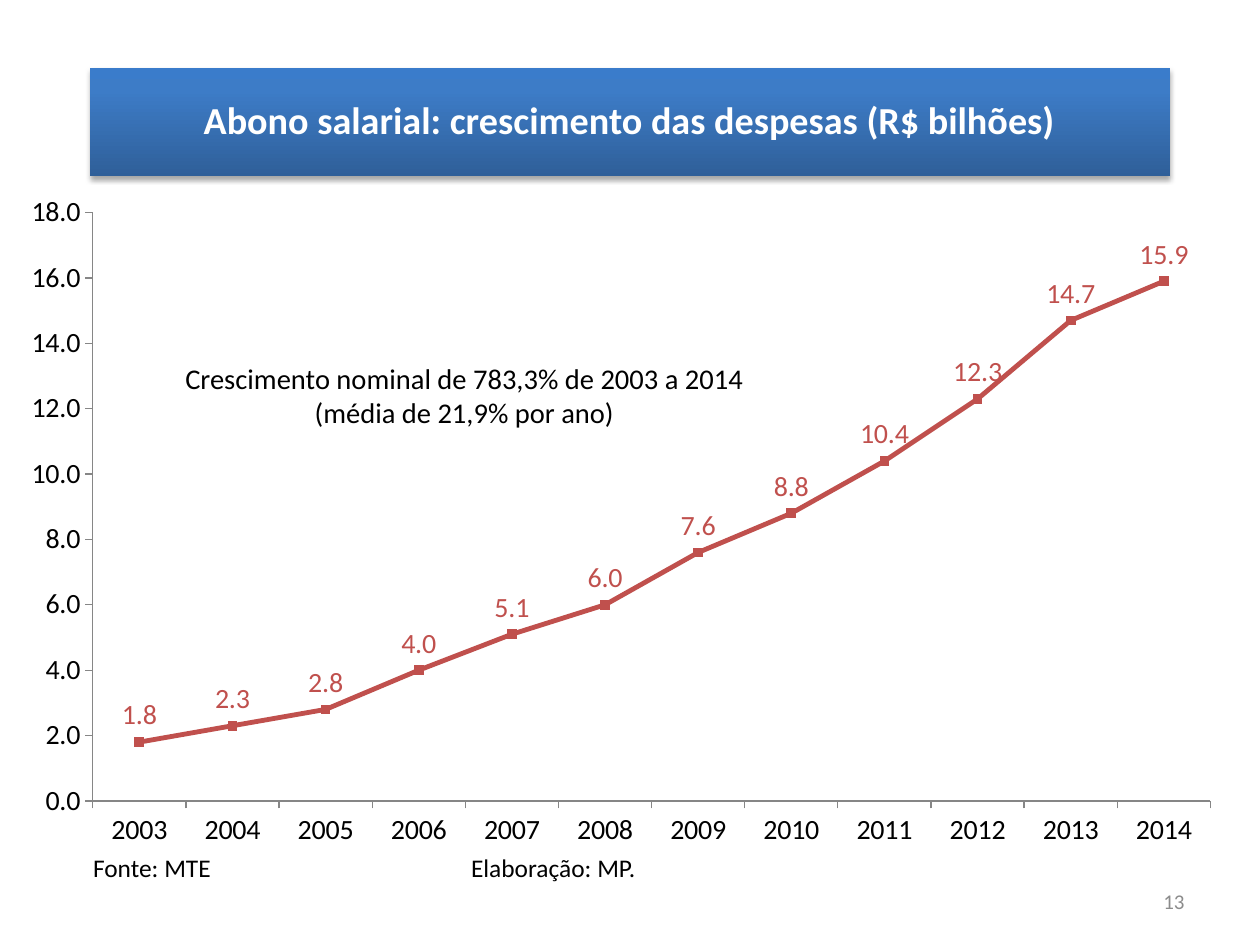
from lxml import etree
from pptx import Presentation
from pptx import util as u
from pptx.chart.data import CategoryChartData
from pptx.dml.color import RGBColor
from pptx.enum import chart as charts, text
from pptx.oxml import parse_xml
from pptx.oxml.ns import nsdecls, qn

BLACK = RGBColor(0, 0, 0)
WHITE = RGBColor(0xFF, 0xFF, 0xFF)
GREY = RGBColor(0x8C, 0x8C, 0x8C)
AXIS_GREY = RGBColor(0x86, 0x86, 0x86)
RED = RGBColor(0xC0, 0x50, 0x4D)
BANNER_STOPS = [(0, "2F5F99"), (80, "3D7CC7"), (100, "3A7CCB")]

YEARS = [str(year) for year in range(2003, 2015)]
SPENDING = [1.8, 2.3, 2.8, 4, 5.1, 6, 7.6, 8.8, 10.4, 12.3, 14.7, 15.9]


class SlideBuilder:
    """Holds the style and the current slide; boxes are shares of the slide's size."""

    font_name = "Calibri"

    def __init__(self, presentation):
        self.width = presentation.slide_width
        self.height = presentation.slide_height
        self.slide = presentation.slides.add_slide(presentation.slide_layouts[5])

    def box(self, left, top, width, height):
        return (round(left * self.width), round(top * self.height),
                round(width * self.width), round(height * self.height))

    def style(self, font, size, color, bold=False):
        font.name, font.size, font.bold = self.font_name, u.Pt(size), bold
        font.color.rgb = color

    def fill_text(self, shape, content, size, color, align, anchor, bold=False):
        frame = shape.text_frame
        frame.word_wrap = True
        frame.vertical_anchor = anchor
        paragraph = frame.paragraphs[0]
        paragraph.alignment = align
        run = paragraph.add_run()
        run.text = content
        self.style(run.font, size, color, bold)
        return paragraph

    def banner_title(self, content, share):
        shape = self.slide.shapes.title
        shape.left, shape.top, shape.width, shape.height = self.box(*share)
        stops = "".join(f'<a:gs pos="{position * 1000}"><a:srgbClr val="{color}"/></a:gs>'
                        for position, color in BANNER_STOPS)
        properties = shape._element.spPr
        properties.append(parse_xml(
            f'<a:prstGeom {nsdecls("a")} prst="rect"><a:avLst/></a:prstGeom>'))
        properties.append(parse_xml(
            f'<a:gradFill {nsdecls("a")} rotWithShape="1"><a:gsLst>{stops}</a:gsLst>'
            '<a:lin ang="16200000" scaled="0"/></a:gradFill>'))
        properties.append(parse_xml(
            f'<a:effectLst {nsdecls("a")}><a:outerShdw blurRad="39400" dist="22900" '
            'dir="5400000" rotWithShape="0"><a:srgbClr val="000000">'
            '<a:alpha val="35000"/></a:srgbClr></a:outerShdw></a:effectLst>'))
        paragraph = self.fill_text(shape, content, 21.8, WHITE, text.PP_ALIGN.CENTER,
                                   text.MSO_ANCHOR.MIDDLE, bold=True)
        paragraph.line_spacing = 0.9

    def text_box(self, content, share, size, color=BLACK, align=text.PP_ALIGN.LEFT,
                 anchor=text.MSO_ANCHOR.TOP, tab=None):
        shape = self.slide.shapes.add_textbox(*self.box(*share))
        paragraph = self.fill_text(shape, content, size, color, align, anchor)
        if tab:
            tabs = etree.SubElement(paragraph._p.get_or_add_pPr(), qn("a:tabLst"))
            etree.SubElement(tabs, qn("a:tab"), pos=str(round(tab * self.width)), algn="l")

    def line_chart(self, categories, values, share, plot):
        data = CategoryChartData(number_format="0.0")
        data.categories = categories
        data.add_series("Series 1", values)
        chart = self.slide.shapes.add_chart(
            charts.XL_CHART_TYPE.LINE_MARKERS, *self.box(*share), data).chart
        chart.has_legend = chart.has_title = False
        self.style(chart.font, 16, BLACK)
        self.axes(chart)
        self.series(chart.plots[0].series[0])
        self.plot_area(chart, plot)

    def axes(self, chart):
        for axis in (chart.category_axis, chart.value_axis):
            axis.has_major_gridlines = False
            axis.major_tick_mark = charts.XL_TICK_MARK.OUTSIDE
            axis.format.line.color.rgb = AXIS_GREY
            axis.format.line.width = u.Pt(0.75)
        scale = chart.value_axis
        scale.minimum_scale, scale.maximum_scale, scale.major_unit = 0, 18, 2
        scale.tick_labels.number_format = "0.0"
        scale.tick_labels.number_format_is_linked = False

    def series(self, series):
        series.smooth = False
        series.format.line.color.rgb = RED
        series.format.line.width = u.Pt(2.75)
        marker = series.marker
        marker.style, marker.size = charts.XL_MARKER_STYLE.SQUARE, 5
        marker.format.fill.solid()
        marker.format.fill.fore_color.rgb = RED
        marker.format.line.color.rgb = RED
        labels = series.data_labels
        labels.show_value = True
        labels.position = charts.XL_LABEL_POSITION.ABOVE
        labels.number_format, labels.number_format_is_linked = "0.0", False
        self.style(labels.font, 16, RED)

    def plot_area(self, chart, plot):
        """Fix the inner plot area, given as shares of the chart."""
        area = chart._chartSpace.chart.plotArea
        for layout in area.findall(qn("c:layout")):
            area.remove(layout)
        layout = etree.Element(qn("c:layout"))
        manual = etree.SubElement(layout, qn("c:manualLayout"))
        settings = [("layoutTarget", "inner"), ("xMode", "edge"), ("yMode", "edge")]
        for name, value in settings + list(zip("xywh", plot)):
            etree.SubElement(manual, qn(f"c:{name}"), val=str(value))
        area.insert(0, layout)


def main():
    presentation = Presentation()
    presentation.slide_width, presentation.slide_height = u.Inches(10), u.Inches(7.5)
    builder = SlideBuilder(presentation)
    builder.banner_title("Abono salarial: crescimento das despesas (R$ bilhões)",
                         (0.0714, 0.072, 0.857, 0.1147))
    builder.text_box("Fonte: MTE\tElaboração: MP.", (0.064, 0.895, 0.85, 0.048), 14.5, tab=0.3)
    builder.line_chart(YEARS, SPENDING, (0.021, 0.207, 0.958, 0.691),
                       plot=(0.055, 0.023, 0.926, 0.904))
    builder.text_box("Crescimento nominal de 783,3% de 2003 a 2014 (média de 21,9% por ano)",
                     (0.114, 0.375, 0.509, 0.087), 16.3, align=text.PP_ALIGN.CENTER)
    builder.text_box("13", (0.717, 0.927, 0.233, 0.053), 12, GREY,
                     text.PP_ALIGN.RIGHT, text.MSO_ANCHOR.MIDDLE)
    presentation.save("out.pptx")


if __name__ == "__main__":
    main()
